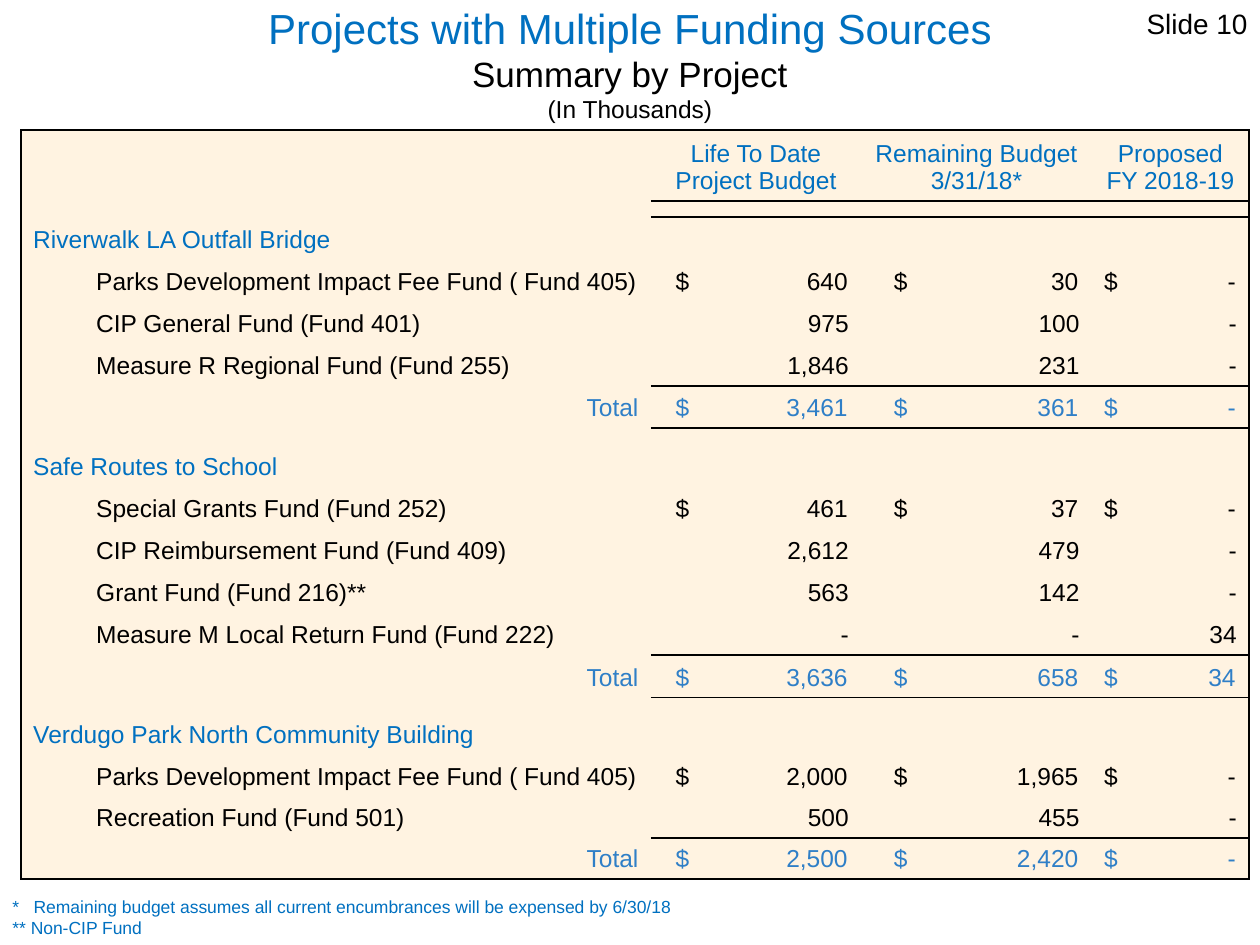
from lxml.etree import SubElement
from pptx import Presentation
from pptx.dml.color import RGBColor
from pptx.enum.text import MSO_ANCHOR, PP_ALIGN
from pptx.oxml.ns import qn
from pptx.util import Cm, Pt

BLUE, TOTAL_BLUE, BLACK, CREAM = "0070C0", "2F7FC7", "000000", "FFF3E1"
NO_STYLE = "{2D5ABB26-0587-4C30-8999-92F81FD0307C}"
COL_WIDTHS = (12.7, 4.24, 4.65, 3.17)
DOLLAR_INSETS = (0.5, 0.66, 0.25)
PAD = 0.25
HEADERS = ("Life To Date Project Budget", "Remaining Budget 3/31/18*", "Proposed FY 2018-19")
# Project name, row height in cm, funds, totals
PROJECTS = (
    ("Riverwalk LA Outfall Bridge", 0.85, (
        ("Parks Development Impact Fee Fund ( Fund 405)", "640", "30", "-"),
        ("CIP General Fund (Fund 401)", "975", "100", "-"),
        ("Measure R Regional Fund (Fund 255)", "1,846", "231", "-"),
    ), ("3,461", "361", "-")),
    ("Safe Routes to School", 0.85, (
        ("Special Grants Fund (Fund 252)", "461", "37", "-"),
        ("CIP Reimbursement Fund (Fund 409)", "2,612", "479", "-"),
        ("Grant Fund (Fund 216)**", "563", "142", "-"),
        ("Measure M Local Return Fund (Fund 222)", "-", "-", "34"),
    ), ("3,636", "658", "34")),
    ("Verdugo Park North Community Building", 0.81, (
        ("Parks Development Impact Fee Fund ( Fund 405)", "2,000", "1,965", "-"),
        ("Recreation Fund (Fund 501)", "500", "455", "-"),
    ), ("2,500", "2,420", "-")),
)


def rgb(color):
    return RGBColor.from_string(color)


def add_text(p, text, size=14, color=BLACK, align=PP_ALIGN.LEFT, indent=0, tab=None):
    """Add a run to a paragraph; tab is (position in cm, alignment)."""
    pPr = p._p.get_or_add_pPr()
    p.alignment = align
    if indent:
        pPr.set("marL", str(Cm(indent)))
    if tab:
        stops = SubElement(pPr, qn("a:tabLst"))
        SubElement(stops, qn("a:tab"), pos=str(Cm(tab[0])), algn=tab[1])
    r = p.add_run()
    r.text = text
    r.font.name, r.font.size = "Arial", Pt(size)
    r.font.color.rgb = rgb(color)


def add_box(s, left, top, width, height, anchor=MSO_ANCHOR.TOP):
    tf = s.shapes.add_textbox(Cm(left), Cm(top), Cm(width), Cm(height)).text_frame
    tf.word_wrap = True
    tf.vertical_anchor = anchor
    return tf


def add_border(cell, side):
    ln = SubElement(cell._tc.get_or_add_tcPr(), qn("a:ln" + side), w=str(Pt(1)))
    fill = SubElement(ln, qn("a:solidFill"))
    SubElement(fill, qn("a:srgbClr"), val=BLACK)


def add_amount(cell, col, text, color, dollar):
    if not dollar:
        add_text(cell.text_frame.paragraphs[0], text, color=color, align=PP_ALIGN.RIGHT)
        return
    inset = DOLLAR_INSETS[col - 1]
    cell.margin_left = Cm(inset)
    stop = COL_WIDTHS[col] - inset - PAD - 0.02
    add_text(cell.text_frame.paragraphs[0], "$\t" + text, color=color, tab=(stop, "r"))


def table_rows():
    """List the rows as (kind, height, label, amounts)."""
    rows = [("header", 1.37, "", HEADERS)]
    for name, height, funds, totals in PROJECTS:
        rows.append(("spacer", 0.33, "", ()))
        rows.append(("project", height, name, ()))
        for i, (fund, *amounts) in enumerate(funds):
            rows.append(("fund" if i else "first fund", height, fund, amounts))
        rows.append(("total", height, "Total", totals))
    return rows


def format_cell(cell, kind, sides):
    for side in sides:
        add_border(cell, side)
    cell.fill.solid()
    cell.fill.fore_color.rgb = rgb(CREAM)
    cell.vertical_anchor = MSO_ANCHOR.BOTTOM
    cell.margin_left = cell.margin_right = Cm(PAD)
    cell.margin_top = cell.margin_bottom = Cm(0 if kind == "spacer" else 0.12)


def fill_cell(cell, kind, col, label, amounts):
    p = cell.text_frame.paragraphs[0]
    color = {"project": BLUE, "total": TOTAL_BLUE}.get(kind, BLACK)
    if col == 0 and label:
        add_text(p, label, color=color, indent=1.27 if "fund" in kind else 0,
                 align=PP_ALIGN.RIGHT if kind == "total" else PP_ALIGN.LEFT)
    elif col and kind == "header":
        add_text(p, amounts[col - 1], color=BLUE, align=PP_ALIGN.CENTER)
    elif col and amounts:
        add_amount(cell, col, amounts[col - 1], color, kind in ("first fund", "total"))
    else:
        size = Pt(6 if kind == "spacer" else 14)
        p._p.get_or_add_endParaRPr().set("sz", str(size.centipoints))


def add_funding_table(s):
    rows = table_rows()
    kinds = [row[0] for row in rows]
    last, last_col = len(rows) - 1, len(COL_WIDTHS) - 1
    frame = s.shapes.add_table(len(rows), len(COL_WIDTHS), Cm(0.42), Cm(2.62),
                               Cm(sum(COL_WIDTHS)), Cm(sum(row[1] for row in rows)))
    table = frame.table
    table.first_row = table.horz_banding = False
    table._tbl.tblPr.find(qn("a:tableStyleId")).text = NO_STYLE
    for column, width in zip(table.columns, COL_WIDTHS):
        column.width = Cm(width)
    for i, (kind, height, label, amounts) in enumerate(rows):
        table.rows[i].height = Cm(height)
        ruled_above = kind == "total" or i == 1
        ruled_below = kind == "header" or (i < last and kinds[i + 1] == "total")
        for col in range(len(COL_WIDTHS)):
            cell = table.cell(i, col)
            edges = {"L": col == 0, "R": col == last_col,
                     "T": i == 0 or (col and ruled_above),
                     "B": i == last or (col and ruled_below)}
            format_cell(cell, kind, [side for side, on in edges.items() if on])
            fill_cell(cell, kind, col, label, amounts)


def add_title(s):
    p = add_box(s, 0.85, 0.42, 23.7, 1.7, MSO_ANCHOR.MIDDLE).paragraphs[0]
    lines = (("Projects with Multiple Funding Sources", 24, BLUE),
             ("Summary by Project", 20, BLACK), ("(In Thousands)", 14, BLACK))
    for i, (text, size, color) in enumerate(lines):
        if i:
            p.add_line_break()
        add_text(p, text, size=size, color=color, align=PP_ALIGN.CENTER)


def add_footnotes(s):
    tf = add_box(s, 0, 17.93, 14.17, 1.1)
    add_text(tf.paragraphs[0], "*\tRemaining budget assumes all current encumbrances "
             "will be expensed by 6/30/18", size=10, color=BLUE, tab=(0.43, "l"))
    add_text(tf.add_paragraph(), "** Non-CIP Fund", size=10, color=BLUE)


def main():
    prs = Presentation()
    prs.slide_width, prs.slide_height = Cm(25.4), Cm(19.05)
    s = prs.slides.add_slide(prs.slide_layouts[6])
    add_title(s)
    add_funding_table(s)
    add_footnotes(s)
    number = add_box(s, 19.48, 0, 5.92, 1.27)
    add_text(number.paragraphs[0], "Slide 10", size=16, align=PP_ALIGN.RIGHT)
    prs.save("out.pptx")


if __name__ == "__main__":
    main()
